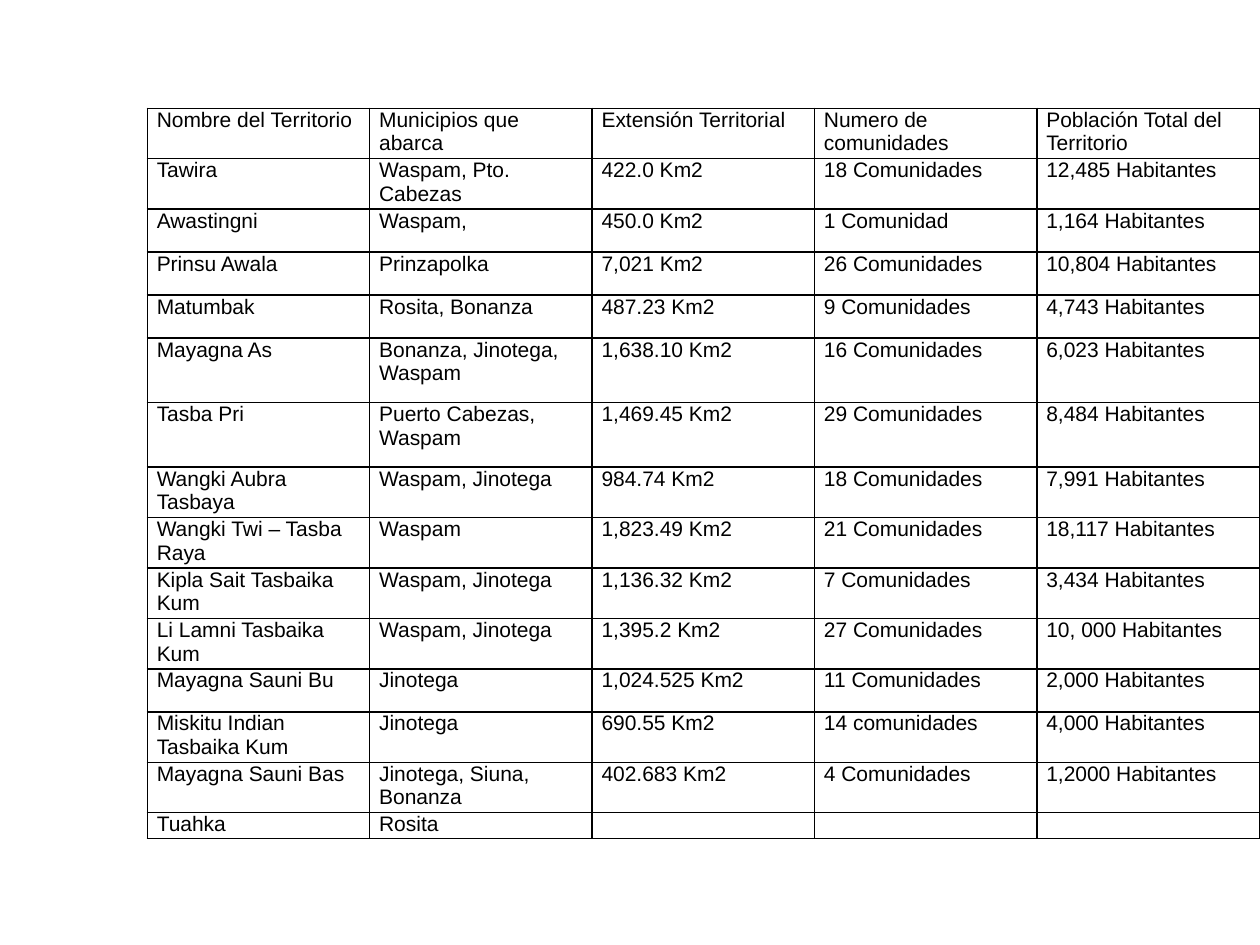
import pptx
import pptx.dml.color
import pptx.oxml.ns
import pptx.util
from dataclasses import dataclass
from lxml import etree

Pt = pptx.util.Pt
qn = pptx.oxml.ns.qn


@dataclass(frozen=True)
class Theme:
    ink: str = "000000"
    font: str = "Arial"
    size: int = 12
    line: int = 1


theme = Theme()

# Row height, then the five cells
rows = [
    (28.8, "Nombre del Territorio", "Municipios que abarca", "Extensión Territorial",
     "Numero de comunidades", "Población Total del Territorio"),
    (28.8, "Tawira", "Waspam, Pto. Cabezas", "422.0 Km2", "18 Comunidades", "12,485 Habitantes"),
    (24.6, "Awastingni", "Waspam,", "450.0 Km2", "1 Comunidad", "1,164 Habitantes"),
    (24.6, "Prinsu Awala", "Prinzapolka", "7,021 Km2", "26 Comunidades", "10,804 Habitantes"),
    (24.6, "Matumbak", "Rosita, Bonanza", "487.23 Km2", "9 Comunidades", "4,743 Habitantes"),
    (36.9, "Mayagna As", "Bonanza, Jinotega, Waspam", "1,638.10 Km2", "16 Comunidades",
     "6,023 Habitantes"),
    (36.9, "Tasba Pri", "Puerto Cabezas, Waspam", "1,469.45 Km2", "29 Comunidades",
     "8,484 Habitantes"),
    (28.8, "Wangki Aubra Tasbaya", "Waspam, Jinotega", "984.74 Km2", "18 Comunidades",
     "7,991 Habitantes"),
    (28.8, "Wangki Twi – Tasba Raya", "Waspam", "1,823.49 Km2", "21 Comunidades",
     "18,117 Habitantes"),
    (28.8, "Kipla Sait Tasbaika Kum", "Waspam, Jinotega", "1,136.32 Km2", "7 Comunidades",
     "3,434 Habitantes"),
    (28.8, "Li Lamni Tasbaika Kum", "Waspam, Jinotega", "1,395.2 Km2", "27 Comunidades",
     "10, 000 Habitantes"),
    (24.6, "Mayagna Sauni Bu", "Jinotega", "1,024.525 Km2", "11 Comunidades", "2,000 Habitantes"),
    (28.8, "Miskitu Indian Tasbaika Kum", "Jinotega", "690.55 Km2", "14 comunidades",
     "4,000 Habitantes"),
    (28.8, "Mayagna Sauni Bas", "Jinotega, Siuna, Bonanza", "402.683 Km2", "4 Comunidades",
     "1,2000 Habitantes"),
    (14.4, "Tuahka", "Rosita", "", "", ""),
]


def frame(cell):
    """Draw a solid line on all four sides of the cell."""
    props = cell._tc.get_or_add_tcPr()
    for side in ("a:lnL", "a:lnR", "a:lnT", "a:lnB"):
        line = etree.SubElement(props, qn(side), w=str(Pt(theme.line)))
        fill = etree.SubElement(line, qn("a:solidFill"))
        etree.SubElement(fill, qn("a:srgbClr"), val=theme.ink)


deck = pptx.Presentation()
deck.slide_width, deck.slide_height = Pt(720), Pt(540)
slide = deck.slides.add_slide(deck.slide_layouts[6])

wide = 127.1
high = sum(row[0] for row in rows)
table = slide.shapes.add_table(
    len(rows), 5, Pt(84.2), Pt(61.9), Pt(5 * wide), Pt(high)).table
table.first_row = table.horz_banding = False
for col in table.columns:
    col.width = Pt(wide)

for r, (tall, *words) in enumerate(rows):
    table.rows[r].height = Pt(tall)
    for c, word in enumerate(words):
        cell = table.cell(r, c)
        cell.margin_left = cell.margin_right = Pt(5.4)
        cell.margin_top = cell.margin_bottom = Pt(0)
        frame(cell)
        cell.fill.background()
        para = cell.text_frame.paragraphs[0]
        para.text = word
        for run in para.runs:
            run.font.name = theme.font
            run.font.size = Pt(theme.size)
            run.font.color.rgb = pptx.dml.color.RGBColor.from_string(theme.ink)
        if not word:
            # Keeps an empty cell from stretching its row
            etree.SubElement(para._p, qn("a:endParaRPr"), sz=str(theme.size * 100))

deck.save("out.pptx")
